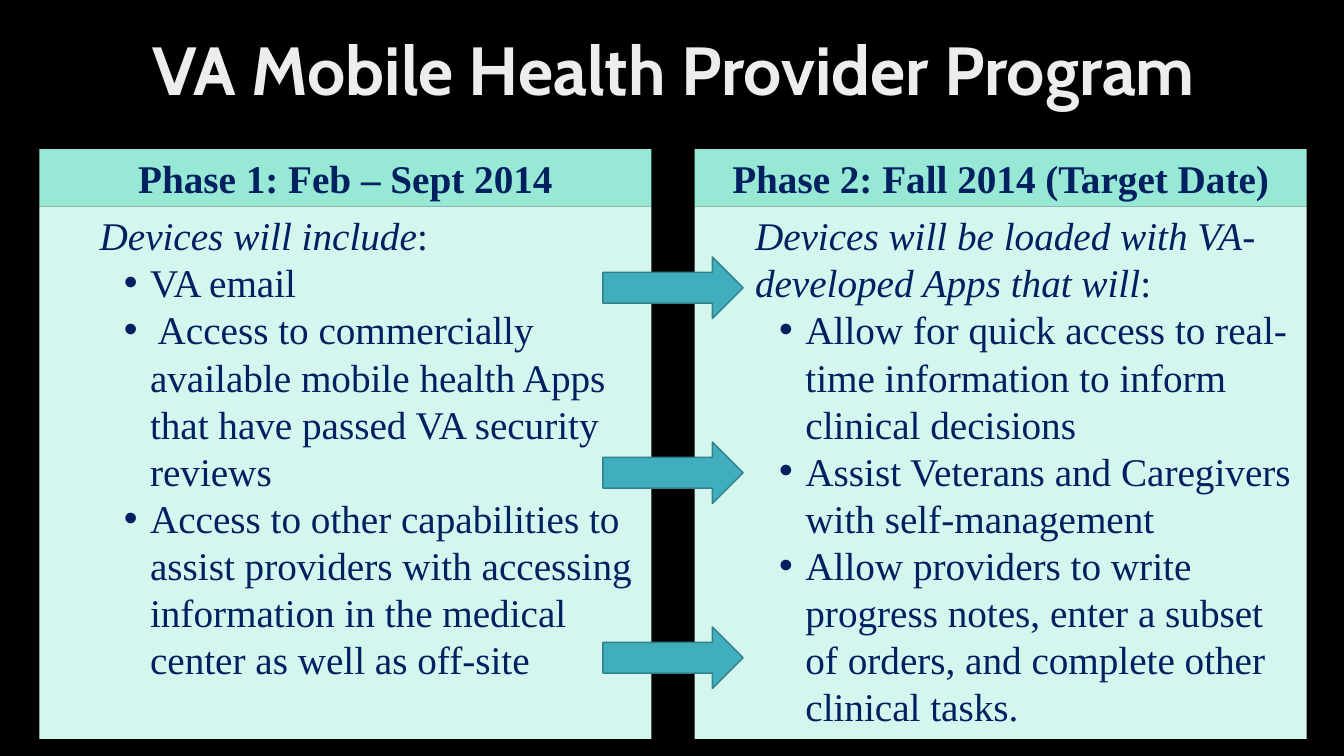
import pptx
import pptx.util
import pptx.dml.color
import pptx.enum.shapes
import pptx.enum.text
import lxml.etree

Inches, Pt = pptx.util.Inches, pptx.util.Pt
RGB = pptx.dml.color.RGBColor
SHAPE = pptx.enum.shapes.MSO_SHAPE
ALIGN = pptx.enum.text.PP_ALIGN
ANCHOR = pptx.enum.text.MSO_ANCHOR

TITLE = "VA Mobile Health Provider Program"
PHASES = [
    ("Phase 1: Feb – Sept 2014", "Devices will include", [
        "VA email",
        " Access to commercially available mobile health Apps that have passed VA security reviews",
        "Access to other capabilities to assist providers with accessing information "
        "in the medical center as well as off-site",
    ]),
    ("Phase 2: Fall 2014 (Target Date)", "Devices will be loaded with VA-developed Apps that will", [
        "Allow for quick access to real-time information to inform clinical decisions",
        "Assist Veterans and Caregivers with self-management",
        "Allow providers to write progress notes, enter a subset of orders, "
        "and complete other clinical tasks.",
    ]),
]

BLACK = RGB(0x00, 0x00, 0x00)
PALE = RGB(0xED, 0xED, 0xED)
NAVY = RGB(0x00, 0x20, 0x60)
MINT = RGB(0x97, 0xE9, 0xD5)
FOAM = RGB(0xD5, 0xF6, 0xEE)
TEAL = RGB(0x41, 0xAE, 0xBD)
DEEP = RGB(0x30, 0x81, 0x8C)

WIDE, HIGH = 13.33, 7.5
LEFT, TOP = 0.39, 1.48
COL, STEP = 6.07, 6.5
HEAD, BODY = 0.57, 5.28
ARROWS, ARROW_W, ARROW_H = 3, 1.39, 0.61
ARROW_X, ARROW_Y, ARROW_STEP = 5.98, 2.55, 1.835


def add_block(slide, kind, x, y, w, h, fill, line=None):
    block = slide.shapes.add_shape(kind, Inches(x), Inches(y), Inches(w), Inches(h))
    block.shadow.inherit = False
    block.fill.solid()
    block.fill.fore_color.rgb = fill
    if line is None:
        block.line.fill.background()
    else:
        block.line.color.rgb = line
        block.line.width = Pt(1)
    return block


def set_font(par, name, size, color, bold=False):
    font = par.font
    font.name, font.size, font.bold = name, Pt(size), bold
    font.color.rgb = color


def indent(par, left, first, bullet=None):
    """Set the margin and first-line indent in inches, with an optional bullet."""
    props = par._p.get_or_add_pPr()
    props.set("marL", str(Inches(left)))
    props.set("indent", str(Inches(first)))
    if bullet:
        space = pptx.oxml.ns.qn
        lxml.etree.SubElement(props, space("a:buFont")).set("typeface", "Arial")
        lxml.etree.SubElement(props, space("a:buChar")).set("char", bullet)


def add_title(slide):
    box = slide.shapes.add_textbox(Inches(0.93), 0, Inches(11.5), Inches(1.45))
    frame = box.text_frame
    frame.word_wrap = True
    frame.vertical_anchor = ANCHOR.MIDDLE
    par = frame.paragraphs[0]
    par.text = TITLE
    par.alignment = ALIGN.CENTER
    par.line_spacing = 0.9
    set_font(par, "Cabin", 48.6, PALE, True)


def add_phase(slide, x, name, lead, items):
    head = add_block(slide, SHAPE.RECTANGLE, x, TOP, COL, HEAD, MINT)
    par = head.text_frame.paragraphs[0]
    par.text = name
    par.alignment = ALIGN.CENTER
    set_font(par, "Times New Roman", 28, NAVY, True)

    body = add_block(slide, SHAPE.RECTANGLE, x, TOP + HEAD, COL, BODY, FOAM)
    frame = body.text_frame
    frame.vertical_anchor = ANCHOR.TOP
    par = frame.paragraphs[0]
    indent(par, 0.5, 0)
    run = par.add_run()
    run.text = lead
    run.font.italic = True
    par.add_run().text = ":"
    for item in items:
        par = frame.add_paragraph()
        par.text = item
        indent(par, 1, -0.26, "•")
    for par in frame.paragraphs:
        par.alignment = ALIGN.LEFT
        set_font(par, "Times New Roman", 28, NAVY)


def main():
    deck = pptx.Presentation()
    deck.slide_width, deck.slide_height = Inches(WIDE), Inches(HIGH)
    slide = deck.slides.add_slide(deck.slide_layouts[6])
    slide.background.fill.solid()
    slide.background.fill.fore_color.rgb = BLACK
    add_title(slide)
    for col, phase in enumerate(PHASES):
        add_phase(slide, LEFT + col * STEP, *phase)
    for row in range(ARROWS):
        add_block(slide, SHAPE.RIGHT_ARROW, ARROW_X, ARROW_Y + row * ARROW_STEP,
                  ARROW_W, ARROW_H, TEAL, DEEP)
    deck.save("out.pptx")


if __name__ == "__main__":
    main()
